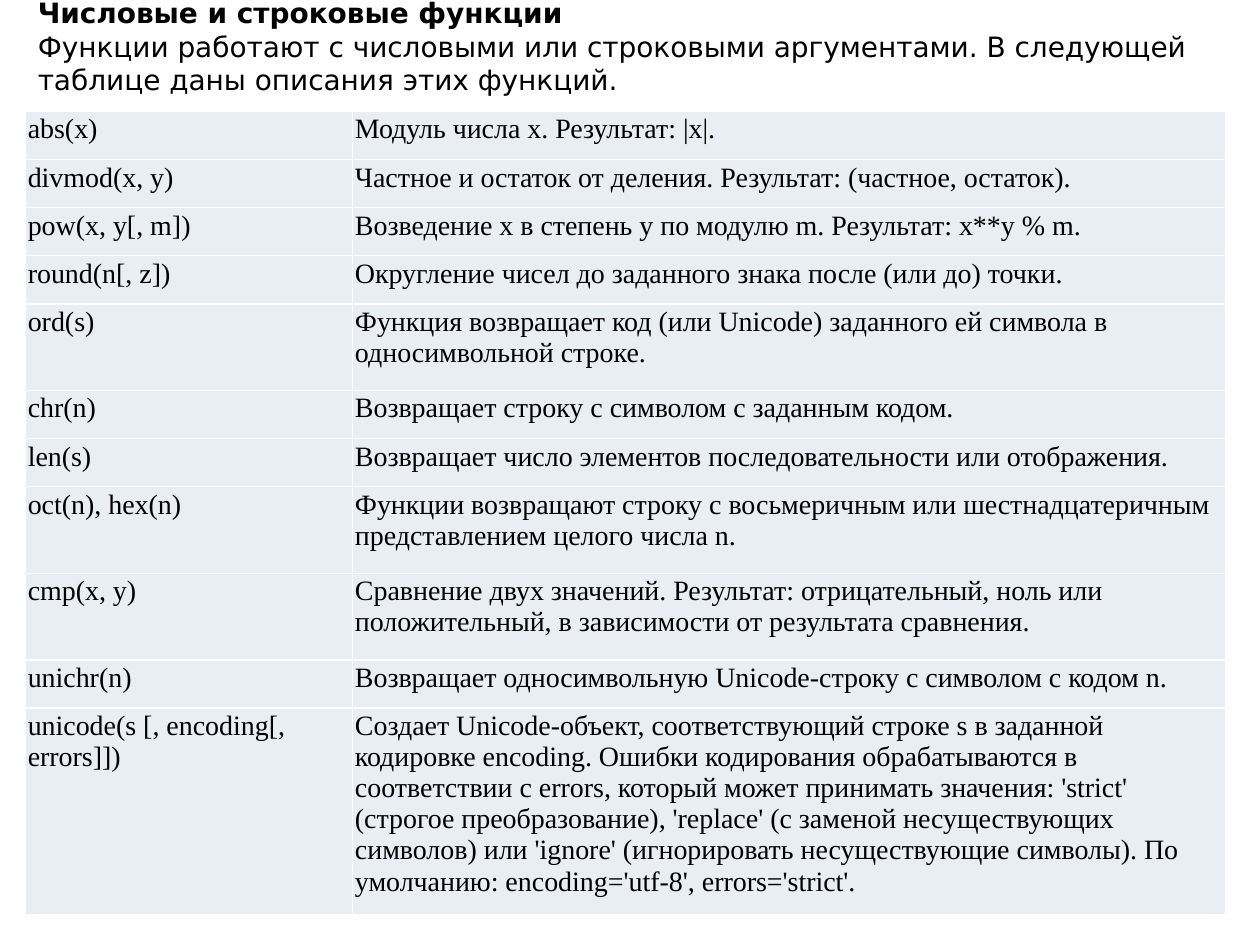
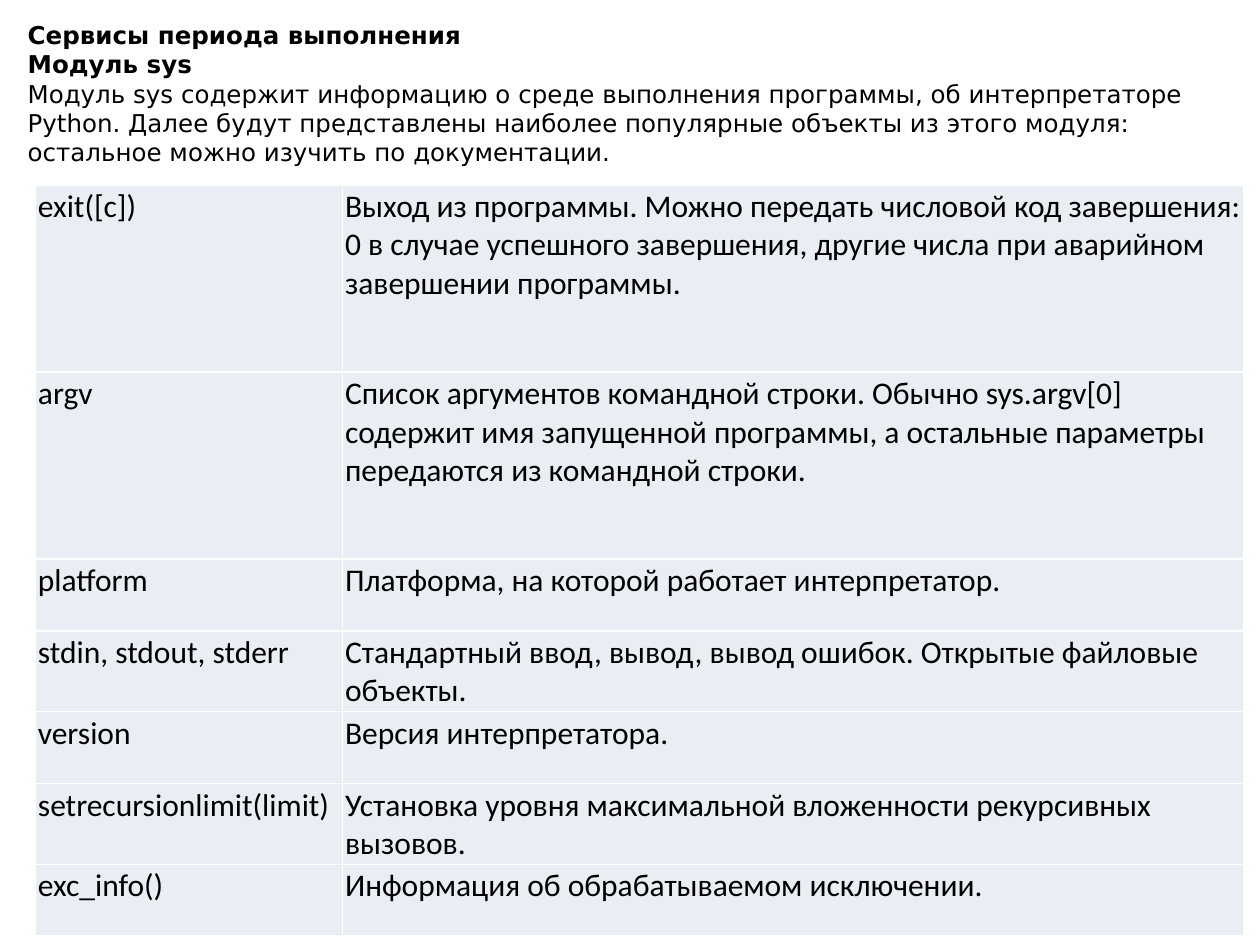
import pptx
import pptx.util
import pptx.dml.color
import pptx.enum.text
import pptx.oxml
import pptx.oxml.ns
from dataclasses import dataclass

Pt = pptx.util.Pt
RGB = pptx.dml.color.RGBColor.from_string

# Content: bold heading lines, intro text, then (name, description, row height)
NUMERIC_FUNCTIONS = {
    "headings": ["Числовые и строковые функции"],
    "intro": "Функции работают с числовыми или строковыми аргументами. "
             "В следующей таблице даны описания этих функций.",
    "heading_size": 16,
    "heading_box": (14.4, -6.5, 692, 62),
    "table_corner": (14.4, 63.6),
    "columns": (187, 499),
    "font": "Times New Roman",
    "size": 16,
    "rows": [
        ("abs(x)", "Модуль числа x. Результат: |x|.", 27.5),
        ("divmod(x, y)", "Частное и остаток от деления. Результат: (частное, остаток).", 27.5),
        ("pow(x, y[, m])", "Возведение x в степень y по модулю m. Результат: x**y % m.", 27.5),
        ("round(n[, z])", "Округление чисел до заданного знака после (или до) точки.", 27.5),
        ("ord(s)", "Функция возвращает код (или Unicode) заданного ей символа в "
                   "односимвольной строке.", 49.5),
        ("chr(n)", "Возвращает строку с символом с заданным кодом.", 27.5),
        ("len(s)", "Возвращает число элементов последовательности или отображения.", 27.5),
        ("oct(n), hex(n)", "Функции возвращают строку с восьмеричным или шестнадцатеричным "
                           "представлением целого числа n.", 49.5),
        ("cmp(x, y)", "Сравнение двух значений. Результат: отрицательный, ноль или "
                      "положительный, в зависимости от результата сравнения.", 49.5),
        ("unichr(n)", "Возвращает односимвольную Unicode-строку с символом с кодом n.", 27.5),
        ("unicode(s [, encoding[, errors]])",
         "Создает Unicode-объект, соответствующий строке s в заданной кодировке encoding. "
         "Ошибки кодирования обрабатываются в соответствии с errors, который может принимать "
         "значения: 'strict' (строгое преобразование), 'replace' (с заменой несуществующих "
         "символов) или 'ignore' (игнорировать несуществующие символы). По умолчанию: "
         "encoding='utf-8', errors='strict'.", 116),
    ],
}

SYS_MODULE = {
    "headings": ["Сервисы периода выполнения", "Модуль sys"],
    "intro": "Модуль sys содержит информацию о среде выполнения программы, об интерпретаторе "
             "Python. Далее будут представлены наиболее популярные объекты из этого модуля: "
             "остальное можно изучить по документации.",
    "heading_size": 14,
    "heading_box": (8.6, 7.2, 702, 88.6),
    "table_corner": (20.2, 105.6),
    "columns": (175.5, 515),
    "font": "Calibri",
    "size": 18,
    "rows": [
        ("exit([c])", "Выход из программы. Можно передать числовой код завершения: 0 в случае "
                      "успешного завершения, другие числа при аварийном завершении программы.", 107),
        ("argv", "Список аргументов командной строки. Обычно sys.argv[0] содержит имя запущенной "
                 "программы, а остальные параметры передаются из командной строки.", 107),
        ("platform", "Платформа, на которой работает интерпретатор.", 41),
        ("stdin, stdout, stderr", "Стандартный ввод, вывод, вывод ошибок. Открытые файловые "
                                  "объекты.", 41),
        ("version", "Версия интерпретатора.", 41),
        ("setrecursionlimit(limit)", "Установка уровня максимальной вложенности рекурсивных "
                                     "вызовов.", 41),
        ("exc_info()", "Информация об обрабатываемом исключении.", 41),
    ],
}


# Shared look
@dataclass(frozen=True)
class Theme:
    ink: str = "000000"
    cell: str = "E9EDF4"
    rule: str = "FFFFFF"
    rule_width: float = 1
    heading_font: str = "DejaVu Sans"
    cell_inset: float = 1.5


THEME = Theme()


def style(paragraph, font, size, bold=False):
    paragraph.alignment = pptx.enum.text.PP_ALIGN.LEFT
    paragraph.font.name = font
    paragraph.font.size = Pt(size)
    paragraph.font.bold = bold
    paragraph.font.color.rgb = RGB(THEME.ink)


def set_insets(target, left, top, right, bottom):
    target.margin_left, target.margin_top = Pt(left), Pt(top)
    target.margin_right, target.margin_bottom = Pt(right), Pt(bottom)


def add_heading(slide, topic):
    heading = slide.shapes.title
    heading.left, heading.top, heading.width, heading.height = map(Pt, topic["heading_box"])
    frame = heading.text_frame
    frame.word_wrap = True
    frame.auto_size = pptx.enum.text.MSO_AUTO_SIZE.SHAPE_TO_FIT_TEXT
    frame.vertical_anchor = pptx.enum.text.MSO_ANCHOR.MIDDLE
    set_insets(frame, 7.2, 3.6, 7.2, 0)
    frame.text = "\n".join(topic["headings"] + [topic["intro"]])
    for index, paragraph in enumerate(frame.paragraphs):
        style(paragraph, THEME.heading_font, topic["heading_size"],
              bold=index < len(topic["headings"]))


def add_borders(cell):
    properties = cell._tc.get_or_add_tcPr()
    for index, side in enumerate(("lnL", "lnR", "lnT", "lnB")):
        properties.insert(index, pptx.oxml.parse_xml(
            f'<a:{side} {pptx.oxml.ns.nsdecls("a")} w="{Pt(THEME.rule_width)}">'
            f'<a:solidFill><a:srgbClr val="{THEME.rule}"/></a:solidFill></a:{side}>'))


def add_reference_table(slide, topic):
    rows, columns = topic["rows"], topic["columns"]
    height = sum(row[-1] for row in rows)
    reference = slide.shapes.add_table(
        len(rows), len(columns), *map(Pt, topic["table_corner"]),
        Pt(sum(columns)), Pt(height)).table
    reference.first_row = reference.horz_banding = False
    for column, width in zip(reference.columns, columns):
        column.width = Pt(width)
    for row, (*texts, row_height) in zip(reference.rows, rows):
        row.height = Pt(row_height)
        for cell, text in zip(row.cells, texts):
            cell.text = text
            set_insets(cell, *[THEME.cell_inset] * 4)
            cell.fill.solid()
            cell.fill.fore_color.rgb = RGB(THEME.cell)
            add_borders(cell)
            style(cell.text_frame.paragraphs[0], topic["font"], topic["size"])


def main():
    deck = pptx.Presentation()
    deck.slide_width, deck.slide_height = Pt(720), Pt(540)
    title_only = deck.slide_layouts.get_by_name("Title Only")
    for topic in (NUMERIC_FUNCTIONS, SYS_MODULE):
        slide = deck.slides.add_slide(title_only)
        add_heading(slide, topic)
        add_reference_table(slide, topic)
    deck.save("out.pptx")


if __name__ == "__main__":
    main()
